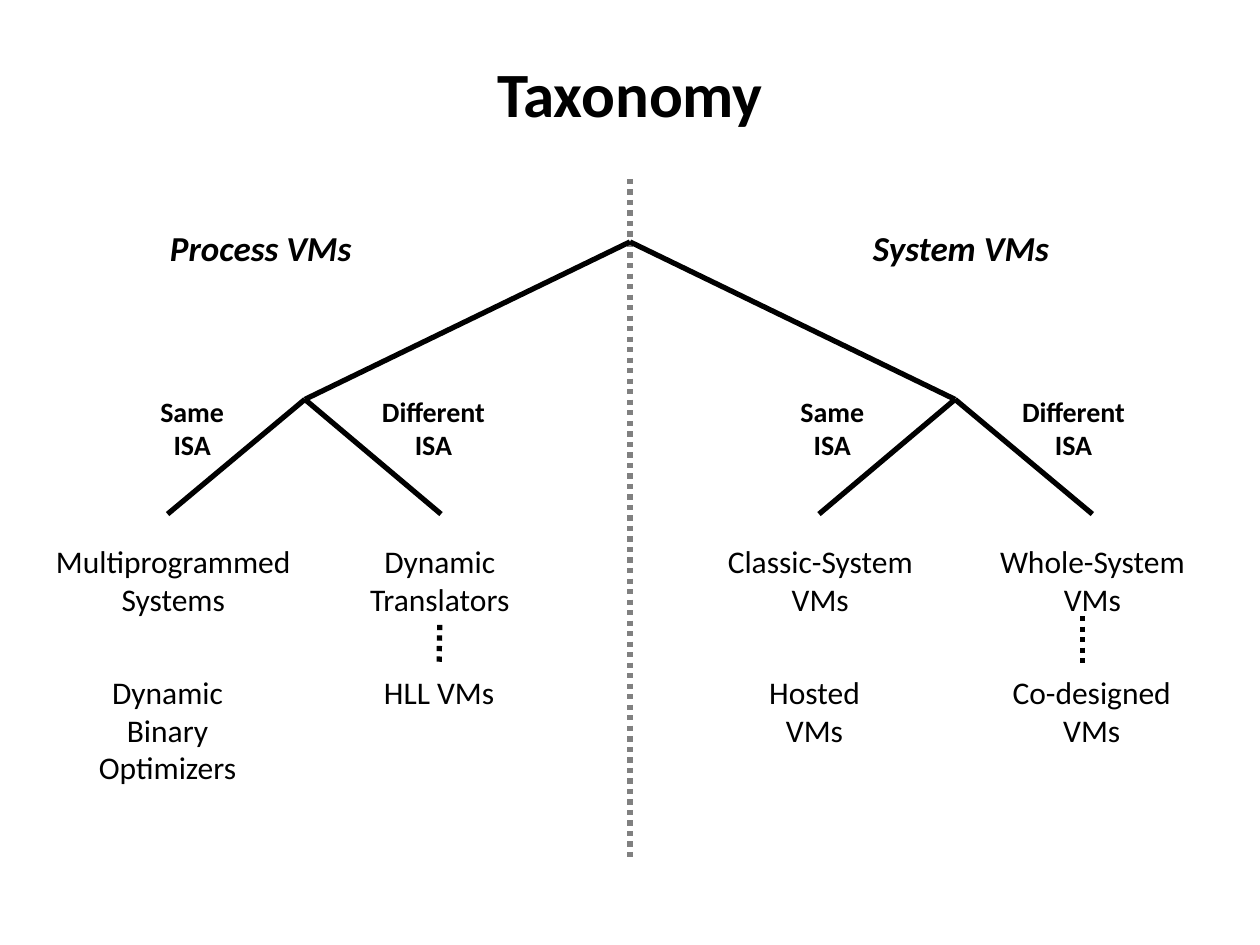
import pptx
import pptx.util
import pptx.dml.color
import pptx.enum.dml
import pptx.enum.shapes
import pptx.enum.text
from pptx.util import Inches

FONT = "Calibri"
BLACK, GRAY = "000000", "808080"
ALIGN = pptx.enum.text.PP_ALIGN
ANCHOR = pptx.enum.text.MSO_ANCHOR


def color(hex_value):
    return pptx.dml.color.RGBColor.from_string(hex_value)


def add_label(slide, box, text, size, bold=False, italic=False,
              align=ALIGN.CENTER, wrap=False, anchor=ANCHOR.TOP):
    """Add a text box with one paragraph per line of text."""
    label = slide.shapes.add_textbox(*(Inches(v) for v in box))
    frame = label.text_frame
    frame.word_wrap = wrap
    frame.vertical_anchor = anchor
    if not wrap:
        frame.auto_size = pptx.enum.text.MSO_AUTO_SIZE.SHAPE_TO_FIT_TEXT
    frame.text = text
    for paragraph in frame.paragraphs:
        paragraph.alignment = align
        font = paragraph.font
        font.name, font.size = FONT, pptx.util.Pt(size)
        font.bold, font.italic = bold, italic
        font.color.rgb = color(BLACK)
    return label


def add_line(slide, start, end, hex_value=BLACK, dotted=False):
    line = slide.shapes.add_connector(
        pptx.enum.shapes.MSO_CONNECTOR.STRAIGHT,
        *(Inches(v) for v in (*start, *end)))
    line.line.color.rgb = color(hex_value)
    line.line.width = pptx.util.Pt(3)
    if dotted:
        line.line.dash_style = pptx.enum.dml.MSO_LINE.ROUND_DOT
    properties = line._element.spPr
    properties.append(pptx.oxml.parse_xml(
        '<a:effectLst xmlns:a='
        '"http://schemas.openxmlformats.org/drawingml/2006/main"/>'))
    return line


def add_branch(slide, root, node, leaf_xs):
    """Draw the line from the root to a node and on to its leaves."""
    add_line(slide, root, node)
    for x in leaf_xs:
        add_line(slide, node, (x, 4.08))


def main():
    prs = pptx.Presentation()
    prs.slide_width, prs.slide_height = Inches(10), Inches(7.5)
    slide = prs.slides.add_slide(prs.slide_layouts[6])

    add_label(slide, (0.5, 0.3, 9, 0.87), "Taxonomy", 36, bold=True,
              wrap=True, anchor=ANCHOR.MIDDLE)

    # Divider and tree
    root = (5, 1.92)
    add_line(slide, (5, 1.42), (5, 6.83), GRAY, dotted=True)
    add_branch(slide, root, (2.42, 3.17), (1.33, 3.5))
    add_branch(slide, root, (7.58, 3.17), (6.5, 8.67))

    # Headings of the two halves
    for left, width, text in ((1.25, 1.65, "Process VMs"),
                              (6.83, 1.61, "System VMs")):
        add_label(slide, (left, 1.75, width, 0.44), text, 20,
                  bold=True, italic=True, align=ALIGN.LEFT)

    # Branch labels, the same pair in each half
    for left in (1.17, 6.25):
        add_label(slide, (left, 3.08, 0.71, 0.64), "Same\nISA", 16, bold=True)
        add_label(slide, (left + 1.75, 3.08, 1.04, 0.64), "Different\nISA",
                  16, bold=True)

    # Leaves: left, top, width, height, text
    leaves = (
        (0.33, 4.25, 2.09, 0.71, "Multiprogrammed\nSystems"),
        (2.83, 4.25, 1.32, 0.71, "Dynamic\nTranslators"),
        (5.67, 4.25, 1.68, 0.71, "Classic-System\nVMs"),
        (7.83, 4.25, 1.68, 0.71, "Whole-System\nVMs"),
        (0.68, 5.29, 1.3, 1.01, "Dynamic\nBinary\nOptimizers"),
        (2.94, 5.29, 1.09, 0.4, "HLL VMs"),
        (6, 5.29, 0.93, 0.71, "Hosted\nVMs"),
        (7.93, 5.29, 1.47, 0.71, "Co-designed\nVMs"),
    )
    leaf_labels = {text: add_label(slide, box, text, 18)
                   for *box, text in leaves}

    # Dotted links between related leaves
    add_line(slide, (8.59, 4.89), (8.59, 5.29), dotted=True)
    translator_link = add_line(slide, (3.49, 4.96), (3.48, 5.29), dotted=True)
    translator_link.begin_connect(leaf_labels["Dynamic\nTranslators"], 2)
    translator_link.end_connect(leaf_labels["HLL VMs"], 0)

    prs.save("out.pptx")


if __name__ == "__main__":
    main()
